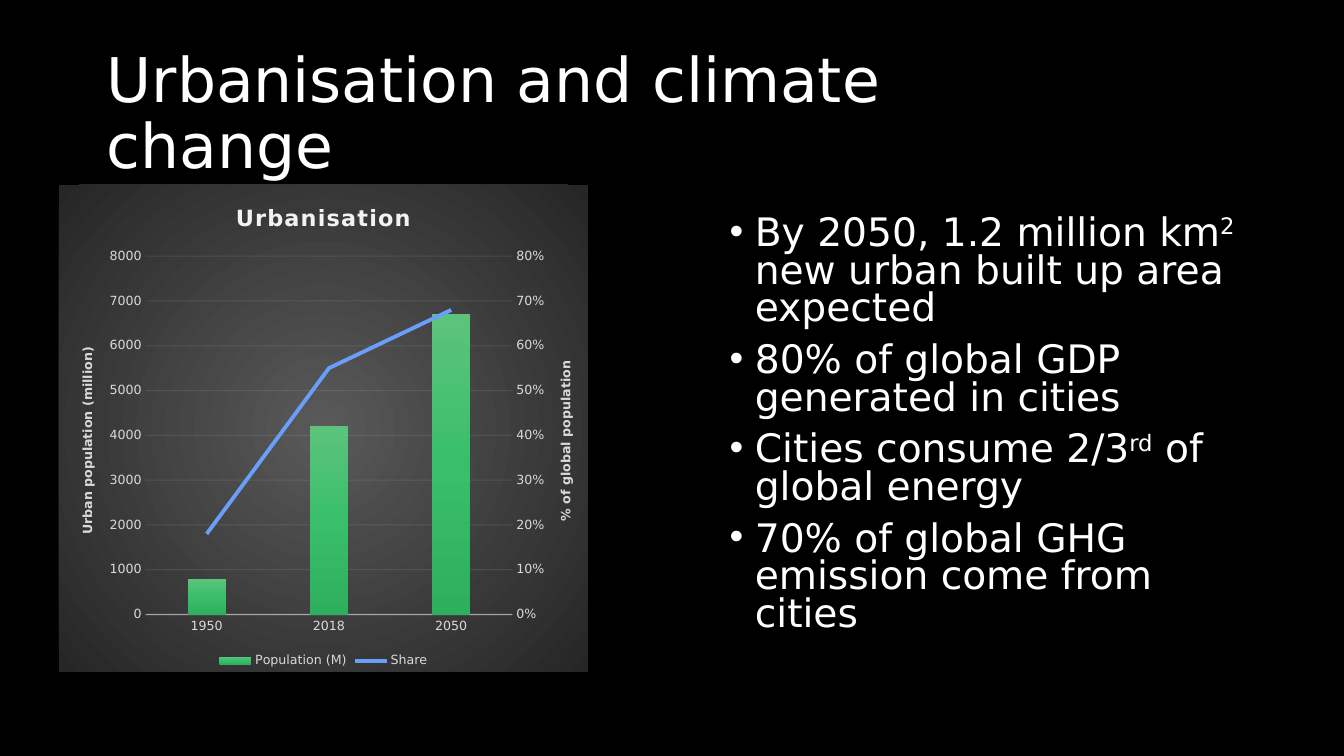
import pptx
import pptx.chart.axis
import pptx.chart.data
import pptx.dml.color
import pptx.enum.chart
import pptx.enum.text
import pptx.oxml
import pptx.oxml.ns
import pptx.util
from lxml import etree

Pt = pptx.util.Pt
qn = pptx.oxml.ns.qn
FONT = "DejaVu Sans"
COLORS = {"background": "000000", "text": "FFFFFF", "label": "D9D9D9",
          "rule": "F2F2F2", "share": "699EFA"}
BAR_STOPS = [(0, "5CC37D"), (50, "39BF6A"), (100, "2DAF5D")]
PANEL_STOPS = [(0, "595959"), (100, "262626")]

HEADING = "Urbanisation and climate change"
FACTS = [  # each fact is a list of (text, is superscript)
    [("By 2050, 1.2 million km", False), ("2", True),
     (" new urban built up area expected", False)],
    [("80% of global GDP generated in cities", False)],
    [("Cities consume 2/3", False), ("rd", True), (" of global energy", False)],
    [("70% of global GHG emission come from cities", False)],
]
CHART_TITLE = "Urbanisation"
YEARS = ["1950", "2018", "2050"]
POPULATION = ("Population (M)", [800, 4200, 6700])
SHARE = ("Share", [0.18, 0.55, 0.68])
POPULATION_AXIS = "Urban population (million)"
SHARE_AXIS = "% of global population"

# left, top, width, height in points; the plot box is measured inside the chart
HEADING_BOX = (69, 33, 720, 99)
FACTS_BOX = (514, 151, 386, 329)
CHART_BOX = (42, 132, 378, 348)
PLOT_BOX = (62, 51, 262, 256)

NS = pptx.oxml.ns.nsdecls("a", "c")


def color(name):
    return pptx.dml.color.RGBColor.from_string(COLORS[name])


def style(font, size, color_name, bold=None):
    font.name, font.size, font.bold = FONT, Pt(size), bold
    font.color.rgb = color(color_name)


def place(shape, box):
    shape.left, shape.top, shape.width, shape.height = map(Pt, box)


def gradient(stops, direction):
    stop_xml = "".join(f'<a:gs pos="{pos * 1000}"><a:srgbClr val="{rgb}"/></a:gs>'
                       for pos, rgb in stops)
    return pptx.oxml.parse_xml(
        f'<a:gradFill {NS} rotWithShape="1"><a:gsLst>{stop_xml}</a:gsLst>'
        f'{direction}</a:gradFill>')


def rule_line(line, width, opacity):
    line.width = Pt(width)
    line.color.rgb = color("rule")
    rgb = line.fill._xPr.find(".//" + qn("a:srgbClr"))
    etree.SubElement(rgb, qn("a:alpha")).set("val", str(opacity * 1000))


def format_axis(axis):
    axis.major_tick_mark = axis.minor_tick_mark = pptx.enum.chart.XL_TICK_MARK.NONE
    style(axis.tick_labels.font, 9, "label")


def format_value_axis(axis, title, top, step, number_format):
    format_axis(axis)
    axis.minimum_scale, axis.maximum_scale, axis.major_unit = 0, top, step
    axis.tick_labels.number_format = number_format
    axis.tick_labels.number_format_is_linked = False
    axis.format.line.fill.background()
    frame = axis.axis_title.text_frame
    run = frame.paragraphs[0].add_run()
    run.text = title
    style(run.font, 9, "label", True)
    body = frame._txBody.find(qn("a:bodyPr"))
    body.set("rot", "-5400000")
    body.set("vert", "horz")


def move_to_right_axis(chart):
    """Turn the second series into a line on its own axis, and return that axis."""
    bars = chart._chartSpace.find(".//" + qn("c:barChart"))
    share = bars.findall(qn("c:ser"))[1]
    invert = share.find(qn("c:invertIfNegative"))
    if invert is not None:
        share.remove(invert)
    lines = pptx.oxml.parse_xml(
        f'<c:lineChart {NS}><c:grouping val="standard"/><c:varyColors val="0"/>'
        '<c:marker val="1"/><c:axId val="5001"/><c:axId val="5002"/></c:lineChart>')
    lines.insert(2, share)
    bars.addnext(lines)
    hidden_axis = pptx.oxml.parse_xml(
        f'<c:catAx {NS}><c:axId val="5001"/><c:scaling/><c:delete val="1"/>'
        '<c:axPos val="b"/><c:crossAx val="5002"/><c:crosses val="autoZero"/></c:catAx>')
    share_axis = pptx.oxml.parse_xml(
        f'<c:valAx {NS}><c:axId val="5002"/><c:scaling/><c:delete val="0"/>'
        '<c:axPos val="r"/><c:tickLblPos val="nextTo"/><c:crossAx val="5001"/>'
        '<c:crosses val="max"/><c:crossBetween val="between"/></c:valAx>')
    chart.value_axis._element.addnext(share_axis)
    share_axis.addnext(hidden_axis)
    return pptx.chart.axis.ValueAxis(share_axis)


def set_plot_area(chart):
    plot_area = chart._chartSpace.find(".//" + qn("c:plotArea"))
    for layout in plot_area.findall(qn("c:layout")):
        plot_area.remove(layout)
    spans = CHART_BOX[2:] * 2
    sizes = "".join(f'<c:{key} val="{length / span:.4f}"/>'
                    for key, length, span in zip("xywh", PLOT_BOX, spans))
    plot_area.insert(0, pptx.oxml.parse_xml(
        f'<c:layout {NS}><c:manualLayout><c:layoutTarget val="inner"/>'
        f'<c:xMode val="edge"/><c:yMode val="edge"/>{sizes}</c:manualLayout></c:layout>'))


def add_heading(heading):
    place(heading, HEADING_BOX)
    heading.text_frame.vertical_anchor = pptx.enum.text.MSO_ANCHOR.MIDDLE
    paragraph = heading.text_frame.paragraphs[0]
    paragraph.alignment = pptx.enum.text.PP_ALIGN.LEFT
    paragraph.line_spacing = 0.9
    run = paragraph.add_run()
    run.text = HEADING
    style(run.font, 44, "text")


def add_facts(body):
    place(body, FACTS_BOX)
    frame = body.text_frame
    frame.auto_size = pptx.enum.text.MSO_AUTO_SIZE.NONE
    for index, fact in enumerate(FACTS):
        paragraph = frame.add_paragraph() if index else frame.paragraphs[0]
        paragraph.line_spacing = 0.8
        paragraph.space_before = Pt(10 if index else 0)
        properties = paragraph._p.get_or_add_pPr()
        properties.set("marL", str(Pt(18)))
        properties.set("indent", str(-Pt(18)))
        etree.SubElement(properties, qn("a:buChar")).set("char", "•")
        for text, superscript in fact:
            run = paragraph.add_run()
            run.text = text
            style(run.font, 28, "text")
            if superscript:
                run.font._element.set("baseline", "30000")


def add_urbanisation_chart(slide):
    data = pptx.chart.data.CategoryChartData()
    data.categories = YEARS
    for name, values in (POPULATION, SHARE):
        data.add_series(name, values)
    chart = slide.shapes.add_chart(pptx.enum.chart.XL_CHART_TYPE.COLUMN_CLUSTERED,
                                   *map(Pt, CHART_BOX), data).chart
    style(chart.font, 10, "text")
    panel = pptx.oxml.parse_xml(f"<c:spPr {NS}/>")
    panel.append(gradient(PANEL_STOPS, '<a:path path="circle"><a:fillToRect l="50000" '
                          't="50000" r="50000" b="50000"/></a:path>'))
    etree.SubElement(etree.SubElement(panel, qn("a:ln")), qn("a:noFill"))
    chart._chartSpace.find(qn("c:chart")).addnext(panel)

    title = chart.chart_title.text_frame.paragraphs[0].add_run()
    title.text = CHART_TITLE
    style(title.font, 16, "rule", True)
    title.font._element.set("spc", "100")
    chart.has_legend = True
    chart.legend.position = pptx.enum.chart.XL_LEGEND_POSITION.BOTTOM
    chart.legend.include_in_layout = False
    style(chart.legend.font, 9, "label")

    # With two value axes chart.value_axis gives the second, so the left one is kept first.
    population_axis = chart.value_axis
    share_axis = move_to_right_axis(chart)
    set_plot_area(chart)
    format_axis(chart.category_axis)
    rule_line(chart.category_axis.format.line, 1, 54)
    format_value_axis(population_axis, POPULATION_AXIS, 8000, 1000, "0")
    rule_line(population_axis.major_gridlines.format.line, 0.75, 10)
    format_value_axis(share_axis, SHARE_AXIS, 0.8, 0.1, "0%")

    bars, lines = chart.plots
    bars.vary_by_categories = False
    bars.gap_width, bars.overlap = 219, -27
    bars.series[0]._element.get_or_add_spPr().append(
        gradient(BAR_STOPS, '<a:lin ang="5400000" scaled="0"/>'))
    share = lines.series[0]
    share.smooth = False
    share.marker.style = pptx.enum.chart.XL_MARKER_STYLE.NONE
    share.format.line.width = Pt(2.75)
    share.format.line.color.rgb = color("share")


def main():
    deck = pptx.Presentation()
    deck.slide_width, deck.slide_height = Pt(960), Pt(540)
    slide = deck.slides.add_slide(deck.slide_layouts[1])
    slide.background.fill.solid()
    slide.background.fill.fore_color.rgb = color("background")
    add_heading(slide.shapes.title)
    add_facts(slide.placeholders[1])
    add_urbanisation_chart(slide)
    deck.save("out.pptx")


if __name__ == "__main__":
    main()
